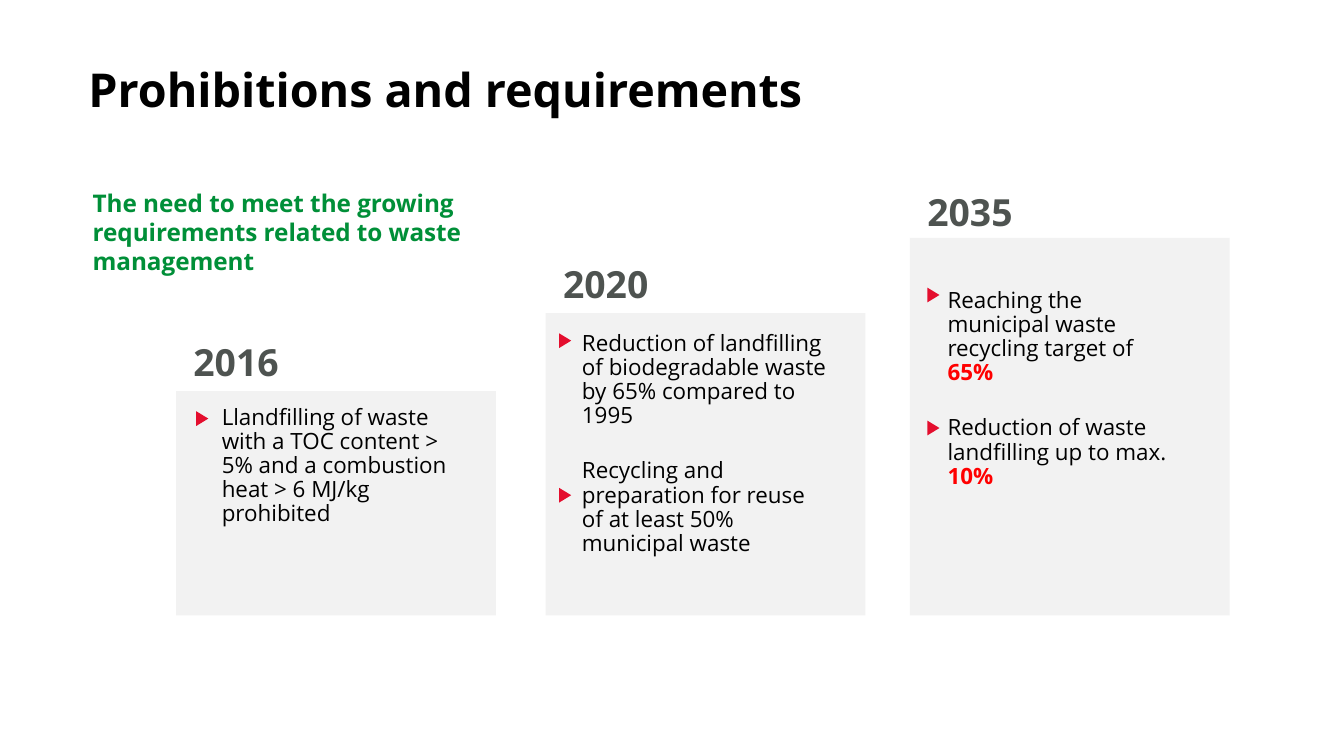
import pptx
import pptx.util
import pptx.dml.color
import pptx.enum.shapes
import pptx.enum.text

SHAPE = pptx.enum.shapes.MSO_SHAPE
ANCHOR = pptx.enum.text.MSO_ANCHOR
COLS, ROWS = 100, 56.25
FOOT = 45.8

TITLE = {"size": 25, "bold": True, "color": "000000"}
LEAD = {"size": 13, "bold": True, "color": "008F38"}
YEAR = {"size": 20, "bold": True, "color": "4E5350"}
BODY = {"size": 12, "bold": False, "color": "000000"}
GOAL = {"size": 12, "bold": True, "color": "FF0000"}
LIST = {"line_spacing": 0.9, "space_after": pptx.util.Pt(0)}
GAP = {"space_before": pptx.util.Pt(16.5)}


def paint(hue):
    """Turn a hex string into a colour."""
    return pptx.dml.color.RGBColor.from_string(hue)


class Slide:
    """Hold the style and the current slide on a grid of columns and rows."""

    font = "Open Sans"
    panel = "F2F2F2"
    mark = "E40E2E"

    def __init__(self, deck):
        """Add a blank slide and measure one grid cell."""
        self.page = deck.slides.add_slide(deck.slide_layouts[6])
        self.col = deck.slide_width / COLS
        self.row = deck.slide_height / ROWS

    def place(self, x, y, w, h):
        """Turn grid units into slide lengths."""
        return [int(v) for v in (x * self.col, y * self.row, w * self.col, h * self.row)]

    def form(self, kind, spot, hue, turn=0):
        """Draw a plain filled shape."""
        item = self.page.shapes.add_shape(kind, *self.place(*spot))
        item.shadow.inherit = False
        item.fill.solid()
        item.fill.fore_color.rgb = paint(hue)
        item.line.fill.background()
        item.rotation = turn

    def arrow(self, x, y):
        """Draw a list marker that points right."""
        self.form(SHAPE.ISOSCELES_TRIANGLE, (x, y, 1.1, 0.9), self.mark, 90)

    def text(self, spot, paras, pads=(1, 0.5), indent=0, anchor=ANCHOR.TOP, **style):
        """Write paragraphs, each a list of words and format pairs."""
        frame = self.page.shapes.add_textbox(*self.place(*spot)).text_frame
        side, edge = int(pads[0] * self.col), int(pads[1] * self.row)
        looks = {"word_wrap": True, "vertical_anchor": anchor,
                 "margin_left": side, "margin_right": side,
                 "margin_top": edge, "margin_bottom": edge}
        for name, value in looks.items():
            setattr(frame, name, value)
        for rank, runs in enumerate(paras):
            para = frame.add_paragraph() if rank else frame.paragraphs[0]
            if indent:
                para._p.get_or_add_pPr().set("marL", str(int(indent * self.col)))
            for name, value in {**style, **(GAP if rank else {})}.items():
                setattr(para, name, value)
            for words, look in runs:
                self.run(para, words, look)

    def run(self, para, words, look):
        """Add one run in the given format."""
        run = para.add_run()
        run.text = words
        run.font.color.rgb = paint(look["color"])
        looks = {"name": self.font, "size": pptx.util.Pt(look["size"]), "bold": look["bold"]}
        for name, value in looks.items():
            setattr(run.font, name, value)

    def label(self, spot, words, look):
        """Write a heading with a small indent."""
        self.text(spot, [[(words, look)]], (0.6, 0.3), 0.7)

    def card(self, x, top, year, head, note, pad, paras, marks):
        """Draw one step: panel, year, notes and markers."""
        self.form(SHAPE.RECTANGLE, (x, top, 23.8, FOOT - top), self.panel)
        self.label((x, head, 12.7, 4.1), year, YEAR)
        self.text(note, paras, (pad, pad), **LIST)
        for spot in marks:
            self.arrow(*spot)


CARDS = [
    (13.1, 29.1, "2016", 24.9, (15.7, 29.4, 18.5, 19.1), 0.8,
     [[("Llandfilling of waste with a TOC content > 5% and a combustion "
        "heat > 6 MJ/kg prohibited", BODY)]],
     [(14.5, 30.7)]),
    (40.6, 23.3, "2020", 19.1, (42.5, 23.9, 20.1, 22.5), 0.8,
     [[("Reduction of landfilling of biodegradable waste by 65% compared to 1995", BODY)],
      [("Recycling and preparation for reuse of at least 50% municipal waste", BODY)]],
     [(41.5, 24.9), (41.5, 36.4)]),
    (67.7, 17.7, "2035", 13.8, (69.8, 20.8, 18.8, 19.9), 0.7,
     [[("Reaching the municipal waste recycling target of ", BODY), ("65%", GOAL)],
      [("Reduction of waste landfilling up to max. ", BODY), ("10%", GOAL)]],
     [(68.9, 21.5), (68.9, 31.4)]),
]


def main():
    """Build the slide and save it."""
    deck = pptx.Presentation()
    deck.slide_width = pptx.util.Inches(10)
    deck.slide_height = deck.slide_width * 9 // 16
    slide = Slide(deck)
    slide.text((5.6, 2.9, 90, 7.4), [[("Prohibitions and requirements", TITLE)]],
               anchor=ANCHOR.MIDDLE)
    slide.label((5.6, 13.7, 29.4, 11.3),
                "The need to meet the growing requirements related to waste management", LEAD)
    for card in CARDS:
        slide.card(*card)
    deck.save("out.pptx")


if __name__ == "__main__":
    main()
